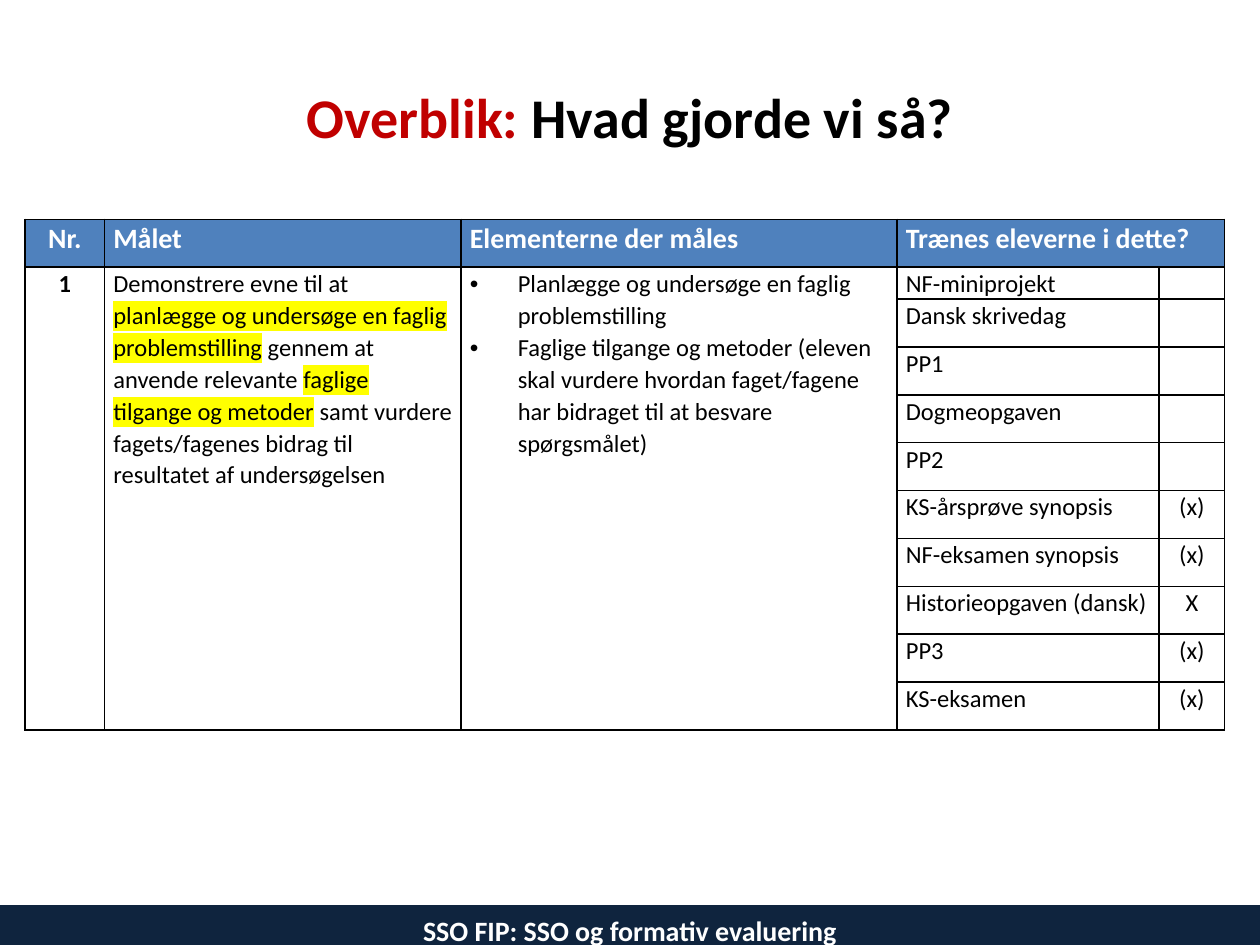
"""Build the overview slide with the table of goals, elements and training."""
from lxml import etree
from pptx import Presentation
from pptx import util as u
from pptx.dml.color import RGBColor
from pptx.enum import shapes, text
from pptx.oxml import ns

RED = RGBColor(0xC0, 0x00, 0x00)
BLACK = RGBColor(0, 0, 0)
WHITE = RGBColor(0xFF, 0xFF, 0xFF)
BLUE = RGBColor(0x4F, 0x81, 0xBD)
NAVY = RGBColor(0x0F, 0x24, 0x3E)
YELLOW = RGBColor(0xFF, 0xFF, 0x00)
FONT = "Calibri"
CENTER = text.PP_ALIGN.CENTER

TITLE = [("Overblik:", RED), (" Hvad gjorde vi så?", BLACK)]
HEADERS = ["Nr.", "Målet", "Elementerne der måles", "Trænes eleverne i dette?"]
NUMBER = "1"
GOAL = [
    ("Demonstrere evne til at ", False),
    ("planlægge og undersøge en faglig problemstilling", True),
    (" gennem at anvende relevante ", False),
    ("faglige tilgange og metoder", True),
    (" samt vurdere fagets/fagenes bidrag til resultatet af undersøgelsen", False),
]
ELEMENTS = [
    "Planlægge og undersøge en faglig problemstilling",
    "Faglige tilgange og metoder (eleven skal vurdere hvordan faget/fagene "
    "har bidraget til at besvare spørgsmålet)",
]
TRAINING = [
    ("NF-miniprojekt", ""),
    ("Dansk skrivedag", ""),
    ("PP1", ""),
    ("Dogmeopgaven", ""),
    ("PP2", ""),
    ("KS-årsprøve synopsis", "(x)"),
    ("NF-eksamen synopsis", "(x)"),
    ("Historieopgaven (dansk)", "X"),
    ("PP3", "(x)"),
    ("KS-eksamen", "(x)"),
]
FOOTER = "SSO FIP: SSO og formativ evaluering"
COLUMN_WIDTHS = [0.63, 2.83, 3.46, 2.08, 0.52]
ROW_HEIGHTS = [0.38, 0.19] + [0.38] * (len(TRAINING) - 1)


def add_element(parent, tag, **attributes):
    return etree.SubElement(parent, ns.qn(tag), attributes)


def style(run, size, color, bold=False, highlight=None):
    run.font.size = u.Pt(size)
    run.font.bold = bold
    run.font.color.rgb = color
    if highlight:
        marker = add_element(run.font._element, "a:highlight")
        add_element(marker, "a:srgbClr", val=str(highlight))
    run.font.name = FONT


def prepare(cell, fill):
    cell.margin_left = cell.margin_right = u.Inches(0.07)
    cell.margin_top = cell.margin_bottom = 0
    properties = cell._tc.get_or_add_tcPr()
    for side in ("a:lnL", "a:lnR", "a:lnT", "a:lnB"):
        border = add_element(properties, side, w=str(u.Pt(1)))
        add_element(add_element(border, "a:solidFill"), "a:srgbClr", val=str(BLACK))
    if fill:
        cell.fill.solid()
        cell.fill.fore_color.rgb = fill
    else:
        cell.fill.background()


def write(cell, paragraphs, size=14, color=BLACK, bold=False, align=None, bullet=False):
    frame = cell.text_frame
    frame.text = "\n".join("".join(part for part, _ in parts) for parts in paragraphs)
    for paragraph, parts in zip(frame.paragraphs, paragraphs):
        paragraph.alignment = align
        paragraph.line_spacing = 1.07
        paragraph.clear()
        for part, marked in parts:
            run = paragraph.add_run()
            run.text = part
            style(run, size, color, bold, YELLOW if marked else None)
        if bullet:
            properties = paragraph._p.get_or_add_pPr()
            properties.set("marL", str(u.Inches(0.38)))
            properties.set("indent", str(-u.Inches(0.38)))
            add_element(properties, "a:buFont", typeface="Arial")
            add_element(properties, "a:buChar", char="•")
        if not parts:
            add_element(paragraph._p, "a:endParaRPr", sz=str(size * 100))


def add_title(slide):
    title = slide.shapes.title
    title.left, title.top = u.Inches(0.5), u.Inches(0.3)
    title.width, title.height = u.Inches(9), u.Inches(1.25)
    title.text_frame.vertical_anchor = text.MSO_ANCHOR.MIDDLE
    heading = title.text_frame.paragraphs[0]
    heading.alignment = CENTER
    for part, color in TITLE:
        run = heading.add_run()
        run.text = part
        style(run, 32, color, bold=True)


def add_goals(slide):
    goals = slide.shapes.add_table(
        len(ROW_HEIGHTS), len(COLUMN_WIDTHS), u.Inches(0.2), u.Inches(1.74),
        u.Inches(sum(COLUMN_WIDTHS)), u.Inches(sum(ROW_HEIGHTS))).table
    goals.first_row = goals.horz_banding = False
    for column, width in zip(goals.columns, COLUMN_WIDTHS):
        column.width = u.Inches(width)
    for index, height in enumerate(ROW_HEIGHTS):
        goals.rows[index].height = u.Inches(height)
        for cell in goals.rows[index].cells:
            prepare(cell, None if index else BLUE)

    goals.cell(0, 3).merge(goals.cell(0, 4))
    for column in range(3):
        goals.cell(1, column).merge(goals.cell(len(TRAINING), column))

    for column, header in enumerate(HEADERS):
        write(goals.cell(0, column), [[(header, False)]], 16, WHITE, True,
              None if column else CENTER)
    write(goals.cell(1, 0), [[(NUMBER, False)]], bold=True, align=CENTER)
    write(goals.cell(1, 1), [GOAL])
    write(goals.cell(1, 2), [[(element, False)] for element in ELEMENTS], bullet=True)
    for row, (activity, mark) in enumerate(TRAINING, 1):
        write(goals.cell(row, 3), [[(activity, False)]])
        write(goals.cell(row, 4), [[(mark, False)] if mark else []], align=CENTER)


def add_footer(slide):
    footer = slide.shapes.add_shape(
        shapes.MSO_SHAPE.RECTANGLE, 0, u.Inches(7.2), u.Inches(10), u.Inches(0.36))
    footer.shadow.inherit = False
    footer.fill.solid()
    footer.fill.fore_color.rgb = NAVY
    footer.line.color.rgb = NAVY
    footer.line.width = u.Pt(2)
    footer.text_frame.text = FOOTER
    footer.text_frame.vertical_anchor = text.MSO_ANCHOR.MIDDLE
    caption = footer.text_frame.paragraphs[0]
    caption.alignment = CENTER
    style(caption.runs[0], 16, WHITE, bold=True)


def main():
    deck = Presentation()
    deck.slide_width, deck.slide_height = u.Inches(10), u.Inches(7.5)
    slide = deck.slides.add_slide(deck.slide_layouts[5])
    add_title(slide)
    add_goals(slide)
    add_footer(slide)
    deck.save("out.pptx")


if __name__ == "__main__":
    main()
